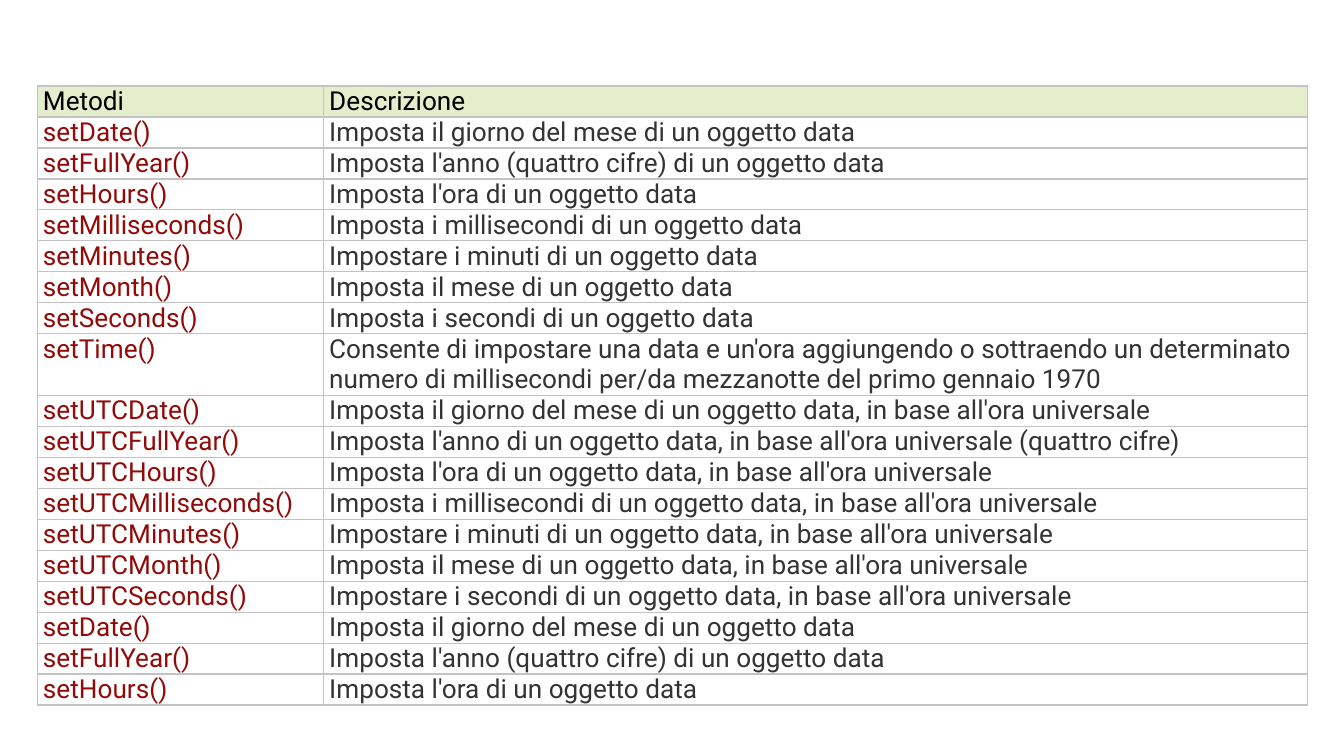
from lxml import etree
from pptx import Presentation
from pptx.dml.color import RGBColor
from pptx.oxml.ns import qn
from pptx.util import Inches, Pt

SLIDE_WIDTH = Inches(10)
SLIDE_HEIGHT = SLIDE_WIDTH * 9 // 16
TABLE_BOX = (Inches(0.28), Inches(0.64), Inches(9.45), Inches(4.6))
NAME_SHARE = 2.13 / 9.45
CELL_INSET = Inches(0.04)
FONT_NAME, FONT_SIZE = "Roboto", Pt(14)
BORDER_WIDTH = Pt(0.75)

BLACK = RGBColor(0x00, 0x00, 0x00)
WHITE = RGBColor(0xFF, 0xFF, 0xFF)
DARK_RED = RGBColor(0x90, 0x0B, 0x09)
DARK_GREY = RGBColor(0x33, 0x33, 0x33)
PALE_GREEN = RGBColor(0xE5, 0xEE, 0xCC)
BORDER_GREY = RGBColor(0xC3, 0xC3, 0xC3)

HEADER = ("Metodi", "Descrizione")
LOCAL_SETTERS = [
    ("setDate()", "Imposta il giorno del mese di un oggetto data"),
    ("setFullYear()", "Imposta l'anno (quattro cifre) di un oggetto data"),
    ("setHours()", "Imposta l'ora di un oggetto data"),
    ("setMilliseconds()", "Imposta i millisecondi di un oggetto data"),
    ("setMinutes()", "Impostare i minuti di un oggetto data"),
    ("setMonth()", "Imposta il mese di un oggetto data"),
    ("setSeconds()", "Imposta i secondi di un oggetto data"),
]
TIME_SETTER = (
    "setTime()",
    "Consente di impostare una data e un'ora aggiungendo o sottraendo un determinato "
    "numero di millisecondi per/da mezzanotte del primo gennaio 1970",
)
UTC_SETTERS = [
    ("setUTCDate()", "Imposta il giorno del mese di un oggetto data, in base all'ora universale"),
    ("setUTCFullYear()", "Imposta l'anno di un oggetto data, in base all'ora universale (quattro cifre)"),
    ("setUTCHours()", "Imposta l'ora di un oggetto data, in base all'ora universale"),
    ("setUTCMilliseconds()", "Imposta i millisecondi di un oggetto data, in base all'ora universale"),
    ("setUTCMinutes()", "Impostare i minuti di un oggetto data, in base all'ora universale"),
    ("setUTCMonth()", "Imposta il mese di un oggetto data, in base all'ora universale"),
    ("setUTCSeconds()", "Impostare i secondi di un oggetto data, in base all'ora universale"),
]
METHODS = LOCAL_SETTERS + [TIME_SETTER] + UTC_SETTERS + LOCAL_SETTERS[:3]


def write_text(frame, text, *, color, size=FONT_SIZE, font=FONT_NAME):
    """Write one formatted run in the first paragraph of a text frame."""
    span = frame.paragraphs[0].add_run()
    span.text = text
    span.font.name = font
    span.font.size = size
    span.font.color.rgb = color


def draw_borders(cell, color, width):
    """Give a cell the same line on all four sides."""
    properties = cell._tc.get_or_add_tcPr()
    for side in ("lnL", "lnR", "lnT", "lnB"):
        line = etree.SubElement(properties, qn(f"a:{side}"), w=str(width))
        fill = etree.SubElement(line, qn("a:solidFill"))
        etree.SubElement(fill, qn("a:srgbClr"), val=str(color))


def fill_cell(cell, text, *, color, background):
    """Set a cell's margins, borders, fill and text."""
    cell.margin_left = cell.margin_right = CELL_INSET
    cell.margin_top = cell.margin_bottom = 0
    draw_borders(cell, BORDER_GREY, BORDER_WIDTH)
    cell.fill.solid()
    cell.fill.fore_color.rgb = background
    write_text(cell.text_frame, text, color=color)


def add_method_table(page, box):
    """Place the table of date methods in the given box."""
    left, top, width, height = box
    rows = [HEADER] + METHODS
    line_counts = [2 if row == TIME_SETTER else 1 for row in rows]
    line_height = height // sum(line_counts)
    table = page.shapes.add_table(len(rows), len(HEADER), left, top, width, height).table
    table.columns[0].width = int(width * NAME_SHARE)
    table.columns[1].width = width - table.columns[0].width
    for index, (row, lines) in enumerate(zip(rows, line_counts)):
        table.rows[index].height = line_height * lines
        colors = (DARK_RED, DARK_GREY) if index else (BLACK, BLACK)
        background = WHITE if index else PALE_GREEN
        for column, (text, color) in enumerate(zip(row, colors)):
            fill_cell(table.cell(index, column), text, color=color, background=background)


def main():
    """Build the slide and save the deck."""
    deck = Presentation()
    deck.slide_width, deck.slide_height = SLIDE_WIDTH, SLIDE_HEIGHT
    page = deck.slides.add_slide(deck.slide_layouts[6])
    add_method_table(page, TABLE_BOX)
    deck.save("out.pptx")


if __name__ == "__main__":
    main()
